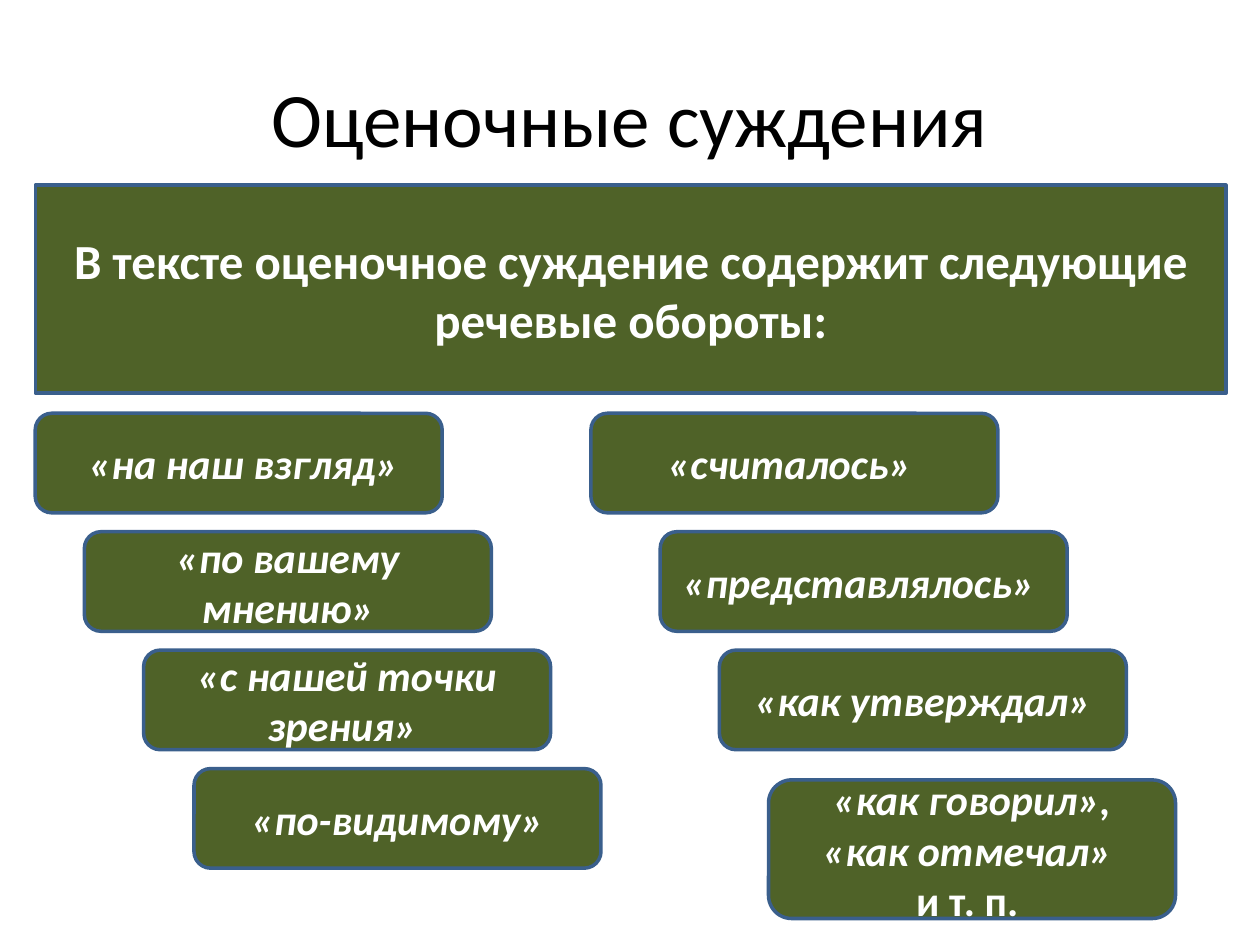
import pptx
import pptx.util
import pptx.dml.color
import pptx.enum.shapes
import pptx.enum.text

Inches, Pt = pptx.util.Inches, pptx.util.Pt
RGBColor = pptx.dml.color.RGBColor
SHAPE = pptx.enum.shapes.MSO_SHAPE

BLACK = RGBColor(0x00, 0x00, 0x00)
WHITE = RGBColor(0xFF, 0xFF, 0xFF)
GREEN = RGBColor(0x4F, 0x62, 0x28)
BLUE = RGBColor(0x3A, 0x5F, 0x8C)

ROW_TOP, ROW_STEP = 3.28, 0.94
CARD_W, CARD_H = 3.23, 0.79


def write(sp, text, size, color, bold=False, italic=False):
    tf = sp.text_frame
    tf.word_wrap = True
    tf.vertical_anchor = pptx.enum.text.MSO_ANCHOR.MIDDLE
    tf.text = text
    for p in tf.paragraphs:
        p.alignment = pptx.enum.text.PP_ALIGN.CENTER
        for r in p.runs:
            r.font.name = "Calibri"
            r.font.size = Pt(size)
            r.font.bold = bold
            r.font.italic = italic
            r.font.color.rgb = color


def add_box(kind, left, top, width, height):
    """Add a green box with a blue outline and no shadow."""
    sp = s.shapes.add_shape(kind, Inches(left), Inches(top), Inches(width), Inches(height))
    sp.shadow.inherit = False
    sp.fill.solid()
    sp.fill.fore_color.rgb = GREEN
    sp.line.color.rgb = BLUE
    sp.line.width = Pt(2)
    return sp


prs = pptx.Presentation()
prs.slide_width, prs.slide_height = Inches(10), Inches(7.5)
s = prs.slides.add_slide(prs.slide_layouts[6])

title = s.shapes.add_textbox(Inches(0.5), Inches(0.3), Inches(9), Inches(1.25))
write(title, "Оценочные суждения", 44, BLACK)

banner = add_box(SHAPE.RECTANGLE, 0.28, 1.47, 9.45, 1.65)
write(banner, "В тексте оценочное суждение содержит следующие речевые обороты:",
      28, WHITE, bold=True)

# Each row: left edge and phrase of the two staggered columns
rows = [
    [(0.28, " «на наш взгляд»"), (4.69, "«считалось» ")],
    [(0.67, "«по вашему мнению»"), (5.24, "«представлялось» ")],
    [(1.14, "«с нашей точки зрения» "), (5.71, "«как утверждал»")],
    [(1.54, "«по-видимому»")],
]
for i, row in enumerate(rows):
    for left, phrase in row:
        card = add_box(SHAPE.ROUNDED_RECTANGLE, left, ROW_TOP + i * ROW_STEP, CARD_W, CARD_H)
        write(card, phrase, 24, WHITE, bold=True, italic=True)

last = add_box(SHAPE.ROUNDED_RECTANGLE, 6.1, 6.19, CARD_W, 1.1)
write(last, "«как говорил», «как отмечал» \nи т. п. ", 24, WHITE, bold=True, italic=True)
last.text_frame.paragraphs[1].runs[0].font.italic = False

prs.save("out.pptx")
